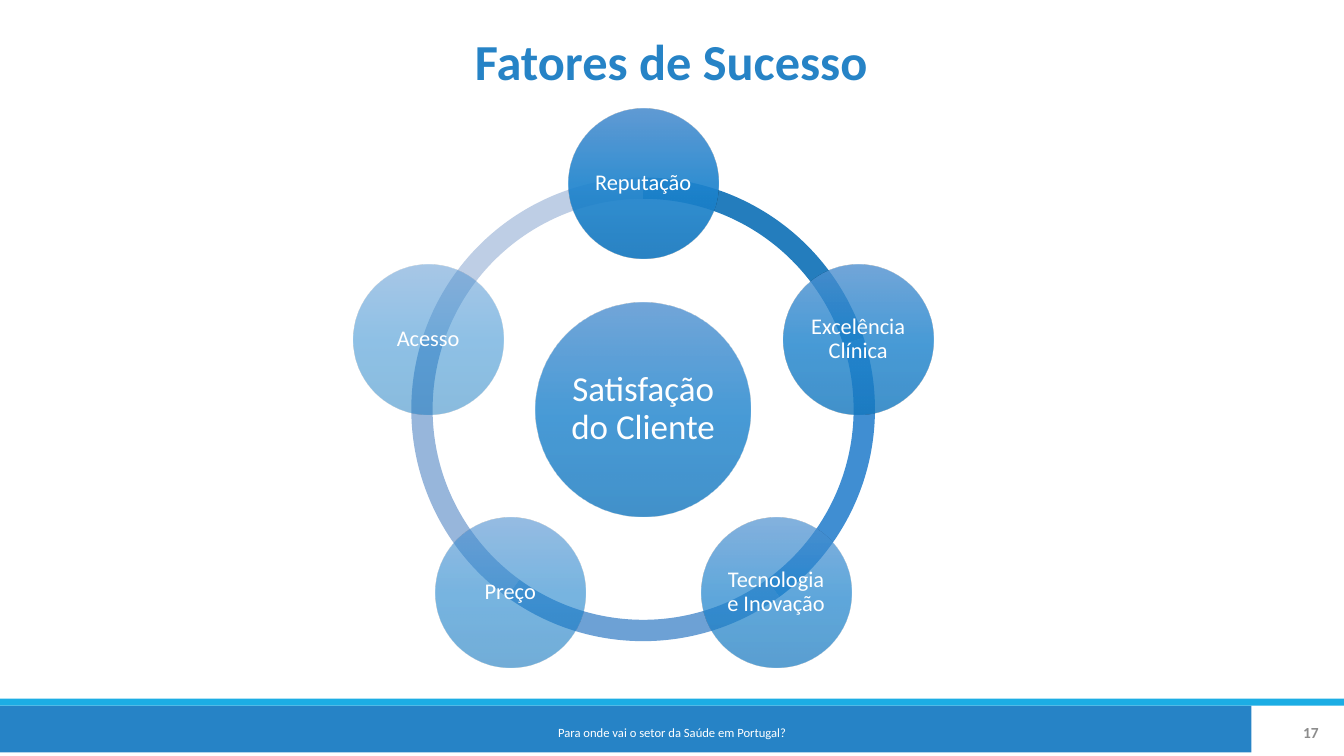
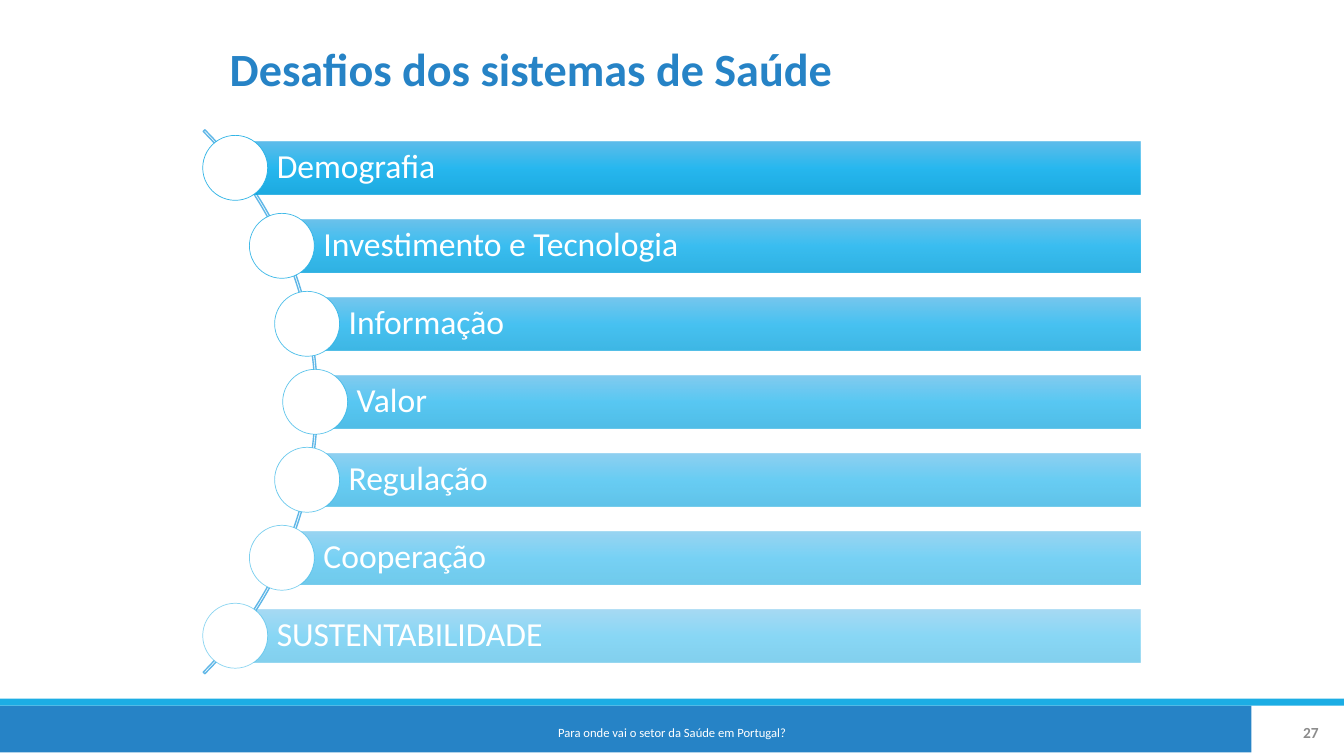
import math

import pptx
import pptx.dml.color
import pptx.enum.shapes
import pptx.enum.text
import pptx.oxml.ns
import pptx.util
from lxml import etree

Pt = pptx.util.Pt
SHAPE = pptx.enum.shapes.MSO_SHAPE
ALIGN = pptx.enum.text.PP_ALIGN
qn = pptx.oxml.ns.qn

COLOURS = {
    "white": "FFFFFF",
    "blue": "2683C6",
    "cyan": "1CADE4",
    "grey": "8C8C8C",
    "curve": "60B7E7",
}
BLUE_GRADIENT = ("5191D0", "1E84CE", "1477BE")
CYAN_GRADIENT = ("4FB6E9", "12B1EE", "06A2DD")
FOOTER = "Para onde vai o setor da Saúde em Portugal?"


def rgb(colour):
    return pptx.dml.color.RGBColor.from_string(COLOURS.get(colour, colour))


def add_alpha(colour_element, opacity):
    alpha = etree.SubElement(colour_element, qn("a:alpha"))
    alpha.set("val", str(round(opacity * 1000)))


class Deck:
    """Holds the shared style and the slide being built."""

    font = "Calibri"

    def __init__(self):
        self.presentation = pptx.Presentation()
        self.presentation.slide_width = Pt(960)
        self.presentation.slide_height = Pt(540)
        self.slide = None

    def new_slide(self, number):
        self.slide = self.presentation.slides.add_slide(
            self.presentation.slide_layouts[6])
        self.shape(SHAPE.RECTANGLE, 0, 504, 894, 33.4, "blue")
        self.shape(SHAPE.RECTANGLE, 0, 499, 960, 5, "cyan")
        self.text_box(FOOTER, 290, 508.5, 380, 28.8, 9, align=ALIGN.CENTER)
        self.text_box(str(number), 733, 508.5, 216, 28.8, 11, "grey",
                      ALIGN.RIGHT, bold=True)

    def title(self, text, left, top, width, height, size, align):
        self.text_box(text, left, top, width, height, size, "blue", align,
                      bold=True, spacing=0.9)

    def text_box(self, text, left, top, width, height, size, colour="white",
                 align=ALIGN.LEFT, bold=False, spacing=1.0):
        box = self.slide.shapes.add_textbox(
            Pt(left), Pt(top), Pt(width), Pt(height))
        self.label(box, text, size, colour, align, bold, spacing)

    def label(self, shape, text, size, colour="white", align=ALIGN.CENTER,
              bold=False, spacing=0.9, insets=None):
        frame = shape.text_frame
        frame.word_wrap = True
        frame.vertical_anchor = pptx.enum.text.MSO_ANCHOR.MIDDLE
        if insets:
            (frame.margin_left, frame.margin_top, frame.margin_right,
             frame.margin_bottom) = [Pt(inset) for inset in insets]
        frame.text = text
        paragraph = frame.paragraphs[0]
        paragraph.alignment = align
        paragraph.line_spacing = spacing
        font = paragraph.runs[0].font
        font.name, font.size, font.bold = self.font, Pt(size), bold
        font.color.rgb = rgb(colour)

    def shape(self, kind, left, top, width, height, fill=None):
        shape = self.slide.shapes.add_shape(
            kind, Pt(left), Pt(top), Pt(width), Pt(height))
        shape.shadow.inherit = False
        shape.line.fill.background()
        if fill:
            shape.fill.solid()
            shape.fill.fore_color.rgb = rgb(fill)
        else:
            shape.fill.background()
        return shape

    def circle(self, x, y, diameter, fill=None):
        return self.shape(SHAPE.OVAL, x - diameter / 2, y - diameter / 2,
                          diameter, diameter, fill)

    def arc(self, x, y, diameter, start, end, thickness, fill=None):
        arc = self.shape(SHAPE.BLOCK_ARC, x - diameter / 2, y - diameter / 2,
                         diameter, diameter, fill)
        # Angles are stored in 60000ths of a degree, adjustments in 100000ths
        for index, value in enumerate(
                (start % 360 * 0.6, end % 360 * 0.6, thickness)):
            arc.adjustments[index] = value
        return arc

    def gradient(self, shape, colours, opacity):
        shape.fill.gradient()
        shape.fill.gradient_angle = 270
        stops = shape._element.spPr.find(qn("a:gradFill")).find(qn("a:gsLst"))
        for stop in list(stops):
            stops.remove(stop)
        for position, colour in zip((0, 50000, 100000), colours):
            stop = etree.SubElement(stops, qn("a:gs"), pos=str(position))
            add_alpha(etree.SubElement(stop, qn("a:srgbClr"), val=colour),
                      opacity)

    def outline(self, shape, colour, width, opacity=100):
        shape.line.color.rgb = rgb(colour)
        shape.line.width = Pt(width)
        if opacity < 100:
            line = shape._element.spPr.find(qn("a:ln"))
            add_alpha(next(line.iter(qn("a:srgbClr"))), opacity)


def success_factors(deck):
    deck.new_slide(17)
    deck.title("Fatores de Sucesso", 169, 28.8, 621, 34.6, 36, ALIGN.CENTER)

    x, y, orbit = 459.4, 292.4, 161.5
    factors = ["Reputação", "Excelência Clínica", "Tecnologia e Inovação",
               "Preço", "Acesso"]
    ring_colours = ["247DBD", "408ED2", "6DA1D5", "97B6DB", "BECEE5"]
    step = 360 / len(factors)

    # Ring, clockwise from the top, with the first segment in front
    for index, colour in reversed(list(enumerate(ring_colours))):
        start = 270 + index * step
        deck.arc(x, y, 331.2, start, start + step, 0.046, colour)

    # Centre
    customer = deck.circle(x, y, 153)
    deck.gradient(customer, BLUE_GRADIENT, 80)
    deck.label(customer, "Satisfação do Cliente", 25, insets=[2.2] * 4)

    # Factors
    for index, factor in enumerate(factors):
        angle = math.radians(270 + index * step)
        satellite = deck.circle(x + orbit * math.cos(angle),
                                y + orbit * math.sin(angle), 107)
        deck.gradient(satellite, BLUE_GRADIENT, 90 - 10 * index)
        deck.label(satellite, factor, 16, insets=[1.5] * 4)


def health_challenges(deck):
    deck.new_slide(27)
    deck.title("Desafios dos sistemas de Saúde", 157, 9.4, 648, 84, 33,
               ALIGN.LEFT)

    # Curve that the markers follow
    x, y, radius = -47.9, 287, 273
    curve = deck.arc(x, y, 549.4, 315, 45, 0.003)
    deck.outline(curve, "curve", 1)

    # Bars with their markers
    challenges = ["Demografia", "Investimento e Tecnologia", "Informação",
                  "Valor", "Regulação", "Cooperação", "SUSTENTABILIDADE"]
    middle = (len(challenges) - 1) / 2
    pitch, bar_height, right = 55.7, 37.6, 815
    for index, challenge in enumerate(challenges):
        offset = (index - middle) * pitch
        left = x + math.sqrt(radius ** 2 - offset ** 2)
        opacity = 90 - 40 * index / (len(challenges) - 1)
        bar = deck.shape(SHAPE.RECTANGLE, left, y + offset - bar_height / 2,
                         right - left, bar_height)
        deck.gradient(bar, CYAN_GRADIENT, opacity)
        deck.label(bar, challenge, 24, align=ALIGN.LEFT,
                   insets=(29.7, 5, 5, 5))
        marker = deck.circle(left, y + offset, 46.4, "white")
        deck.outline(marker, "cyan", 0.5, opacity)


def main():
    deck = Deck()
    success_factors(deck)
    health_challenges(deck)
    deck.presentation.save("out.pptx")


if __name__ == "__main__":
    main()
